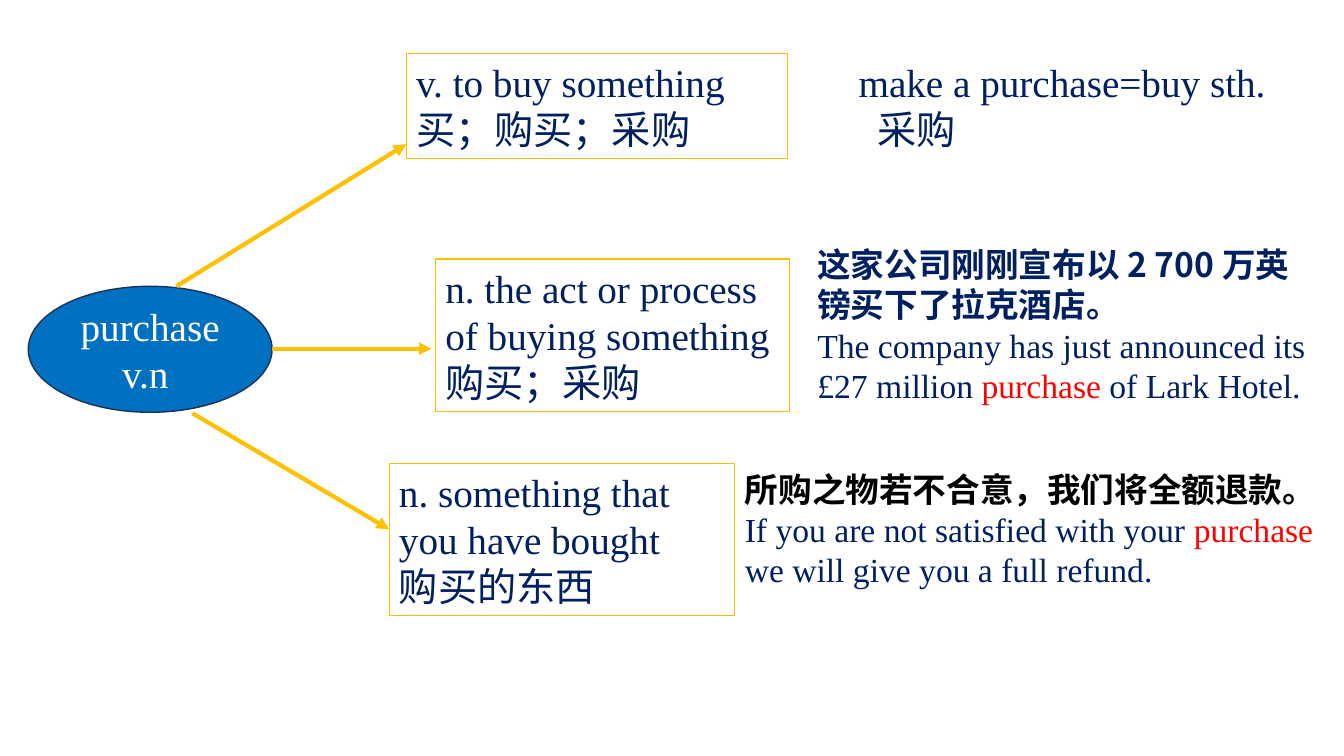
import pptx
import pptx.dml.color
import pptx.enum.shapes
import pptx.enum.text
import pptx.oxml.ns
import pptx.util
from lxml import etree

COLORS = {"navy": "002060", "red": "FF0000", "black": "000000", "white": "FFFFFF",
          "blue": "0070C0", "outline": "1E3256", "gold": "FFC000"}
LATIN, CJK = "Times New Roman", "Noto Sans CJK SC"
COLS, ROWS = 96, 54


def rgb(name):
    return pptx.dml.color.RGBColor.from_string(COLORS[name])


def sub(parent, tag, **attrs):
    return etree.SubElement(parent, pptx.oxml.ns.qn(tag), attrs)


class WordMap:
    """Draws on one slide; places are columns and rows of a 96 by 54 grid."""

    def __init__(self, prs):
        self.slide = prs.slides.add_slide(prs.slide_layouts[6])
        self.col = prs.slide_width / COLS
        self.row = prs.slide_height / ROWS

    def place(self, *lengths):
        return [round(v * (self.row if i % 2 else self.col)) for i, v in enumerate(lengths)]

    def run(self, p, text, size, font=LATIN, color="navy", bold=False):
        r = p.add_run()
        r.text = text
        style = {"name": font, "size": pptx.util.Pt(size), "bold": bold}
        for key, value in style.items():
            setattr(r.font, key, value)
        r.font.color.rgb = rgb(color)
        sub(r._r.get_or_add_rPr(), "a:ea", typeface=font)

    def fill_text(self, sp, paragraphs, size, align="LEFT", anchor="TOP", grow=True):
        tf = sp.text_frame
        sizing = pptx.enum.text.MSO_AUTO_SIZE
        frame = {"word_wrap": True,
                 "auto_size": sizing.SHAPE_TO_FIT_TEXT if grow else sizing.NONE,
                 "vertical_anchor": getattr(pptx.enum.text.MSO_ANCHOR, anchor)}
        for key, value in frame.items():
            setattr(tf, key, value)
        for i, runs in enumerate(paragraphs):
            p = tf.add_paragraph() if i else tf.paragraphs[0]
            p.alignment = getattr(pptx.enum.text.PP_ALIGN, align)
            for text, style in runs:
                if text == "\n":
                    p.add_line_break()
                else:
                    self.run(p, text, size, **style)

    def shape(self, kind, at, line, width, fill=None):
        preset = getattr(pptx.enum.shapes.MSO_SHAPE, kind)
        sp = self.slide.shapes.add_shape(preset, *self.place(*at))
        sp.shadow.inherit = False
        if fill:
            sp.fill.solid()
            sp.fill.fore_color.rgb = rgb(fill)
        else:
            sp.fill.background()
        sp.line.color.rgb = rgb(line)
        sp.line.width = pptx.util.Pt(width)
        return sp

    def word(self, at, lines):
        sp = self.shape("OVAL", at, "outline", 1, "blue")
        runs = [[(text, {"color": "white"})] for text in lines]
        self.fill_text(sp, runs, 28, "CENTER", "MIDDLE", grow=False)

    def meaning(self, at, english, chinese):
        sp = self.shape("RECTANGLE", at, "gold", 0.75)
        self.fill_text(sp, [[(english, {})], [(chinese, {"font": CJK})]], 28)

    def example(self, at, paragraphs, size):
        sp = self.slide.shapes.add_textbox(*self.place(*at))
        self.fill_text(sp, paragraphs, size)
        return sp

    def arrow(self, *ends):
        kind = pptx.enum.shapes.MSO_CONNECTOR.STRAIGHT
        cn = self.slide.shapes.add_connector(kind, *self.place(*ends))
        cn.line.color.rgb = rgb("gold")
        cn.line.width = pptx.util.Pt(3)
        sp_pr = cn._element.spPr
        sub(sp_pr.find(pptx.oxml.ns.qn("a:ln")), "a:tailEnd", type="triangle")
        sub(sp_pr, "a:effectLst")


def main():
    prs = pptx.Presentation()
    prs.slide_width, prs.slide_height = pptx.util.Inches(13.33), pptx.util.Inches(7.5)
    s = WordMap(prs)

    # Headword and its three branches
    s.word((2.02, 20.45, 17.42, 9), ["purchase", "v.n "])
    for ends in [(12.6, 20.45, 29.02, 10.3),
                 (19.44, 24.91, 30.82, 24.91),
                 (13.75, 29.52, 27.79, 37.8)]:
        s.arrow(*ends)

    # Meanings
    for at, english, chinese in [
            ((29.02, 3.82, 27.22, 7.49), "v. to buy something", "买；购买；采购"),
            ((31.1, 18.5, 25.27, 10.87), "n. the act or process of buying something", "购买；采购"),
            ((27.79, 33.12, 24.7, 10.87), "n. something that you have bought", "购买的东西")]:
        s.meaning(at, english, chinese)

    # Phrase, with its translation indented
    phrase = s.example((60.62, 3.82, 30.89, 7.49),
                       [[("make a purchase=buy sth.", {})], [("采购", {"font": CJK})]], 28)
    indent = pptx.util.Inches(0.19)
    phrase.text_frame.paragraphs[1]._p.get_or_add_pPr().set("marL", str(indent))

    # Example sentences
    keyword = ("purchase", {"color": "red"})
    s.example((57.67, 17.06, 36.79, 12.38), [
        [("这家公司刚刚宣布以 2 700 万英镑买下了拉克酒店。", {"font": CJK, "bold": True})],
        [("The company has just announced its £27 million ", {}), keyword,
         (" of Lark Hotel.", {})]], 24)
    s.example((52.49, 33.12, 43.56, 9.43), [
        [("所购之物若不合意，我们将全额退款。", {"font": CJK, "color": "black", "bold": True}),
         ("\n", {}),
         ("If you are not satisfied with your ", {}), keyword,
         (" we will give you a full refund.", {})]], 24)

    prs.save("out.pptx")


if __name__ == "__main__":
    main()
